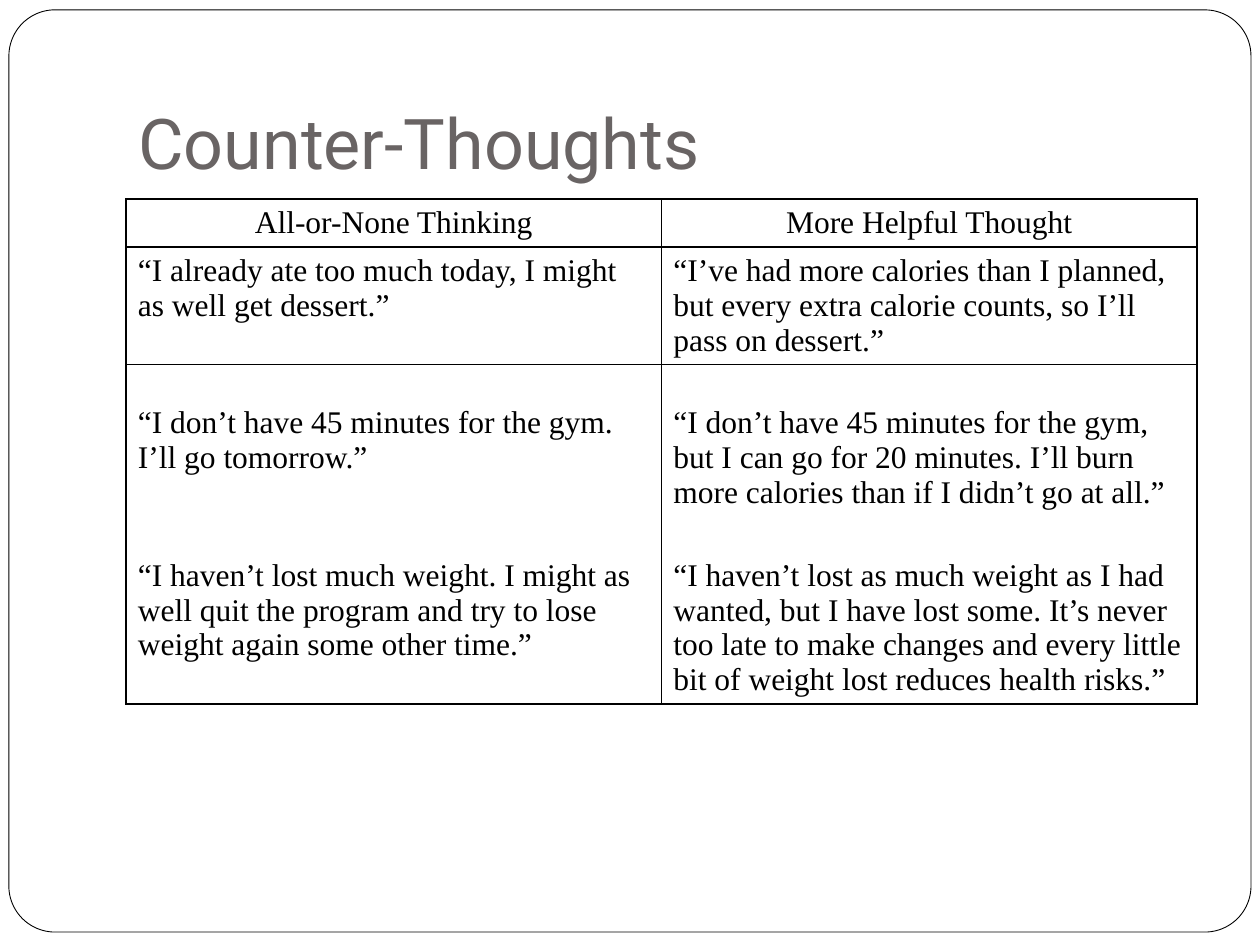
from lxml.etree import SubElement
from pptx import Presentation
from pptx.dml.color import RGBColor
from pptx.enum.shapes import MSO_SHAPE
from pptx.enum.text import MSO_ANCHOR, MSO_AUTO_SIZE, PP_ALIGN
from pptx.oxml.ns import qn
from pptx.util import Cm, Pt

BLACK, WHITE, GREY = "000000", "FFFFFF", "696464"
TITLE_FONT = {"name": "Roboto", "size": Pt(40), "bold": False}
TABLE_FONT = {"name": "Times New Roman", "size": Pt(18), "bold": False}
TITLE_FRAME = {
    "word_wrap": True, "auto_size": MSO_AUTO_SIZE.NONE, "vertical_anchor": MSO_ANCHOR.BOTTOM,
    "margin_left": Cm(0.25), "margin_right": Cm(0.25),
    "margin_top": Cm(0.13), "margin_bottom": Cm(0.25),
}
CELL_FORMAT = {
    "vertical_anchor": MSO_ANCHOR.TOP, "margin_left": Cm(0.24), "margin_right": Cm(0.24),
    "margin_top": Cm(0.13), "margin_bottom": Cm(0.13),
}
LOW_TEXT = {"margin_top": Cm(0.83)}
PLAIN_TABLE = {"first_row": False, "horz_banding": False}

# Row height, cell format, and the sides that have a line
ROWS = [
    (0.97, {}, "LRTB"),
    (2.36, {}, "LRTB"),
    (3.06, LOW_TEXT, "LRT"),
    (3.77, LOW_TEXT, "LRB"),
]
THOUGHTS = [
    ("All-or-None Thinking", "More Helpful Thought"),
    ("“I already ate too much today, I might as well get dessert.”",
     "“I’ve had more calories than I planned, but every extra calorie counts, "
     "so I’ll pass on dessert.”"),
    ("“I don’t have 45 minutes for the gym. I’ll go tomorrow.”",
     "“I don’t have 45 minutes for the gym, but I can go for 20 minutes. "
     "I’ll burn more calories than if I didn’t go at all.”"),
    ("“I haven’t lost much weight. I might as well quit the program and try to lose "
     "weight again some other time.”",
     "“I haven’t lost as much weight as I had wanted, but I have lost some. It’s never "
     "too late to make changes and every little bit of weight lost reduces health risks.”"),
]


def rgb(code):
    return RGBColor.from_string(code)


def apply(target, values):
    for attribute, value in values.items():
        setattr(target, attribute, value)


def write(paragraph, text, font, color, align):
    paragraph.text = text
    paragraph.alignment = align
    apply(paragraph.runs[0].font, font)
    paragraph.runs[0].font.color.rgb = rgb(color)


def set_borders(cell, sides):
    properties = cell._tc.get_or_add_tcPr()
    for side in "LRTB":
        border = SubElement(properties, qn(f"a:ln{side}"), w=str(Pt(1)))
        if side in sides:
            fill = SubElement(border, qn("a:solidFill"))
            SubElement(fill, qn("a:srgbClr"), val=BLACK)
        else:
            SubElement(border, qn("a:noFill"))


def add_frame(slide, left, top, width, height):
    """Rounded page border behind everything else."""
    frame = slide.shapes.add_shape(
        MSO_SHAPE.ROUNDED_RECTANGLE, Cm(left), Cm(top), Cm(width), Cm(height))
    frame.adjustments[0] = 0.05
    frame.shadow.inherit = False
    frame.fill.solid()
    frame.fill.fore_color.rgb = rgb(WHITE)
    frame.line.color.rgb = rgb(BLACK)
    frame.line.width = Pt(0.5)
    slide.shapes._spTree.insert(2, frame._element)


def place_title(slide, text, left, top, width, height):
    title = slide.shapes.title
    apply(title, {"left": Cm(left), "top": Cm(top), "width": Cm(width), "height": Cm(height)})
    apply(title.text_frame, TITLE_FRAME)
    write(title.text_frame.paragraphs[0], text, TITLE_FONT, GREY, PP_ALIGN.LEFT)


def add_thought_table(slide, left, top, width):
    height = sum(row_height for row_height, _, _ in ROWS)
    table = slide.shapes.add_table(
        len(THOUGHTS), 2, Cm(left), Cm(top), Cm(width), Cm(height)).table
    apply(table, PLAIN_TABLE)
    for index, (thoughts, (row_height, extra, sides)) in enumerate(zip(THOUGHTS, ROWS)):
        table.rows[index].height = Cm(row_height)
        align = PP_ALIGN.LEFT if index else PP_ALIGN.CENTER
        for cell, thought in zip(table.rows[index].cells, thoughts):
            apply(cell, CELL_FORMAT | extra)
            write(cell.text_frame.paragraphs[0], thought, TABLE_FONT, BLACK, align)
            set_borders(cell, sides)
            cell.fill.background()


def main():
    deck = Presentation()
    apply(deck, {"slide_width": Cm(25.4), "slide_height": Cm(19.05)})
    slide = deck.slides.add_slide(deck.slide_layouts.get_by_name("Title Only"))
    add_frame(slide, 0.18, 0.2, 25.04, 18.59)
    place_title(slide, "Counter-Thoughts", 2.54, 0.76, 21.59, 3.18)
    add_thought_table(slide, 2.54, 4.01, 21.59)
    deck.save("out.pptx")


if __name__ == "__main__":
    main()
